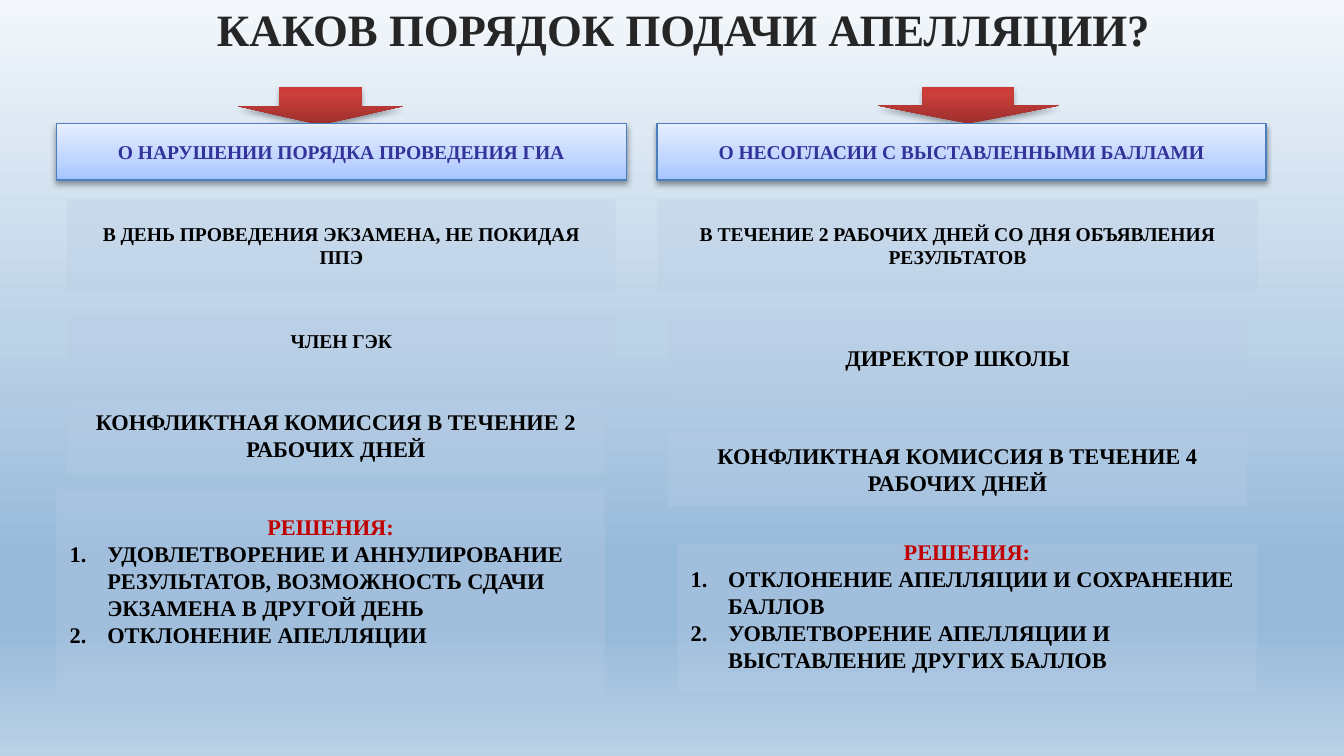
from pptx import Presentation
from pptx.dml.color import RGBColor as Rgb
from pptx.enum.shapes import MSO_SHAPE as Kind
from pptx.enum.text import MSO_ANCHOR as Anchor, PP_ALIGN as Align
from pptx.oxml import parse_xml
from pptx.oxml.ns import nsdecls, qn
from pptx.util import Inches, Pt

THEME = {
    "font": "Times New Roman",
    "title": 24, "small": 10.5, "body": 12,
    "dark": "262626", "black": "000000", "blue": "333399", "red": "C00000",
    "edge": "4B7EBC", "panel": "B9CDE5", "clear": 31,
    "sky": [(0, "F3F7FB"), (44, "BCD2E7"), (74, "97BADA"),
            (83, "97BADA"), (100, "BAD1E6")],
    "arrow": [(0, "9C2F2D"), (80, "CB3E3A"), (100, "CE3B37")],
    "head": [(0, "A4C4FF"), (35, "BFD4FF"), (100, "E6EEFF")],
}

TITLE = "КАКОВ ПОРЯДОК ПОДАЧИ АПЕЛЛЯЦИИ?"
RESULT = "РЕШЕНИЯ:"
COLUMNS = [
    {
        "arrow": (1.77, 0.65, 1.23, 0.28),
        "head": ("О НАРУШЕНИИ ПОРЯДКА ПРОВЕДЕНИЯ ГИА", (0.42, 0.92, 4.24, 0.42)),
        "steps": [
            ("В ДЕНЬ ПРОВЕДЕНИЯ ЭКЗАМЕНА, НЕ ПОКИДАЯ ППЭ", "small",
             (0.5, 1.48, 4.08, 0.69)),
            ("ЧЛЕН ГЭК", "small", (0.5, 2.34, 4.08, 0.39)),
            ("КОНФЛИКТНАЯ КОМИССИЯ В ТЕЧЕНИЕ 2 РАБОЧИХ ДНЕЙ", "body",
             (0.5, 2.96, 4, 0.56)),
        ],
        "ends": (["УДОВЛЕТВОРЕНИЕ И АННУЛИРОВАНИЕ РЕЗУЛЬТАТОВ, ВОЗМОЖНОСТЬ "
                  "СДАЧИ ЭКЗАМЕНА В ДРУГОЙ ДЕНЬ",
                  "ОТКЛОНЕНИЕ АПЕЛЛЯЦИИ"], (0.42, 3.64, 4.08, 1.56)),
    },
    {
        "arrow": (6.53, 0.65, 1.35, 0.27),
        "head": ("О НЕСОГЛАСИИ С ВЫСТАВЛЕННЫМИ БАЛЛАМИ", (4.89, 0.92, 4.53, 0.42)),
        "steps": [
            ("В ТЕЧЕНИЕ 2 РАБОЧИХ ДНЕЙ СО ДНЯ ОБЪЯВЛЕНИЯ РЕЗУЛЬТАТОВ", "small",
             (4.89, 1.48, 4.47, 0.69)),
            ("ДИРЕКТОР ШКОЛЫ", "body", (4.97, 2.38, 4.31, 0.56)),
            ("КОНФЛИКТНАЯ КОМИССИЯ В ТЕЧЕНИЕ 4 РАБОЧИХ ДНЕЙ", "body",
             (4.97, 3.21, 4.31, 0.56)),
        ],
        "ends": (["ОТКЛОНЕНИЕ АПЕЛЛЯЦИИ И СОХРАНЕНИЕ БАЛЛОВ",
                  "УОВЛЕТВОРЕНИЕ АПЕЛЛЯЦИИ И ВЫСТАВЛЕНИЕ ДРУГИХ БАЛЛОВ"],
                 (5.04, 4.05, 4.31, 1.11)),
    },
]


def blend(fill, root, stops, angle):
    fill.solid()
    marks = "".join(
        f'<a:gs pos="{pos * 1000}"><a:srgbClr val="{tone}"/></a:gs>'
        for pos, tone in stops)
    grad = parse_xml(
        f'<a:gradFill {nsdecls("a")} rotWithShape="1"><a:gsLst>{marks}</a:gsLst>'
        f'<a:lin ang="{angle * 60000}" scaled="0"/></a:gradFill>')
    old = root.find(".//" + qn("a:solidFill"))
    old.getparent().replace(old, grad)


def shade(shape, alpha, dist):
    cast = parse_xml(
        f'<a:outerShdw {nsdecls("a")} blurRad="{Pt(3.1)}" dist="{Pt(dist)}" '
        f'dir="5400000" rotWithShape="0"><a:srgbClr val="{THEME["black"]}">'
        f'<a:alpha val="{alpha * 1000}"/></a:srgbClr></a:outerShdw>')
    shape._element.spPr.find(qn("a:effectLst")).append(cast)


def write(frame, text, size="body", color="black", count=False, more=False, lead=None):
    para = frame.add_paragraph() if more else frame.paragraphs[0]
    para.alignment = Align.LEFT if count else Align.CENTER
    if lead:
        para.line_spacing = lead
    if count:
        props = para._p.get_or_add_pPr()
        props.set("marL", str(Inches(0.28)))
        props.set("indent", str(Inches(-0.28)))
        props.append(parse_xml(f'<a:buFont {nsdecls("a")} typeface="+mj-lt"/>'))
        props.append(parse_xml(f'<a:buAutoNum {nsdecls("a")} type="arabicPeriod"/>'))
    run = para.add_run()
    run.text = text
    font = run.font
    font.name, font.size, font.bold = THEME["font"], Pt(THEME[size]), True
    font.color.rgb = Rgb.from_string(THEME[color])


def place(slide, kind, box):
    shape = slide.shapes.add_shape(kind, *map(Inches, box))
    shape.shadow.inherit = False
    shape.line.fill.background()
    frame = shape.text_frame
    frame.word_wrap = True
    frame.vertical_anchor = Anchor.MIDDLE
    return shape


def panel(slide, box):
    shape = place(slide, Kind.RECTANGLE, box)
    shape.fill.solid()
    shape.fill.fore_color.rgb = Rgb.from_string(THEME["panel"])
    tone = shape._element.spPr.find(".//" + qn("a:srgbClr"))
    tone.append(parse_xml(f'<a:alpha {nsdecls("a")} val="{THEME["clear"] * 1000}"/>'))
    return shape.text_frame


def column(slide, data):
    arrow = place(slide, Kind.DOWN_ARROW, data["arrow"])
    blend(arrow.fill, arrow._element.spPr, THEME["arrow"], 270)
    shade(arrow, 35, 1.8)

    text, box = data["head"]
    head = place(slide, Kind.RECTANGLE, box)
    blend(head.fill, head._element.spPr, THEME["head"], 270)
    head.line.color.rgb = Rgb.from_string(THEME["edge"])
    head.line.width = Pt(0.75)
    shade(head, 38, 1.6)
    write(head.text_frame, text, size="small", color="blue")

    for text, size, box in data["steps"]:
        write(panel(slide, box), text, size=size)

    items, box = data["ends"]
    frame = panel(slide, box)
    frame.margin_bottom = Inches(0.25)
    write(frame, RESULT, color="red")
    for item in items:
        write(frame, item, count=True, more=True)


def main():
    deck = Presentation()
    deck.slide_width = Inches(10)
    deck.slide_height = deck.slide_width * 9 // 16
    slide = deck.slides.add_slide(deck.slide_layouts[5])
    blend(slide.background.fill, slide._element, THEME["sky"], 90)

    title = slide.shapes.title
    title.left, title.top, title.width, title.height = map(
        Inches, (0.42, 0, 9.33, 0.48))
    title.text_frame.vertical_anchor = Anchor.MIDDLE
    write(title.text_frame, TITLE, size="title", color="dark", lead=0.9)

    for data in COLUMNS:
        column(slide, data)
    deck.save("out.pptx")


if __name__ == "__main__":
    main()
